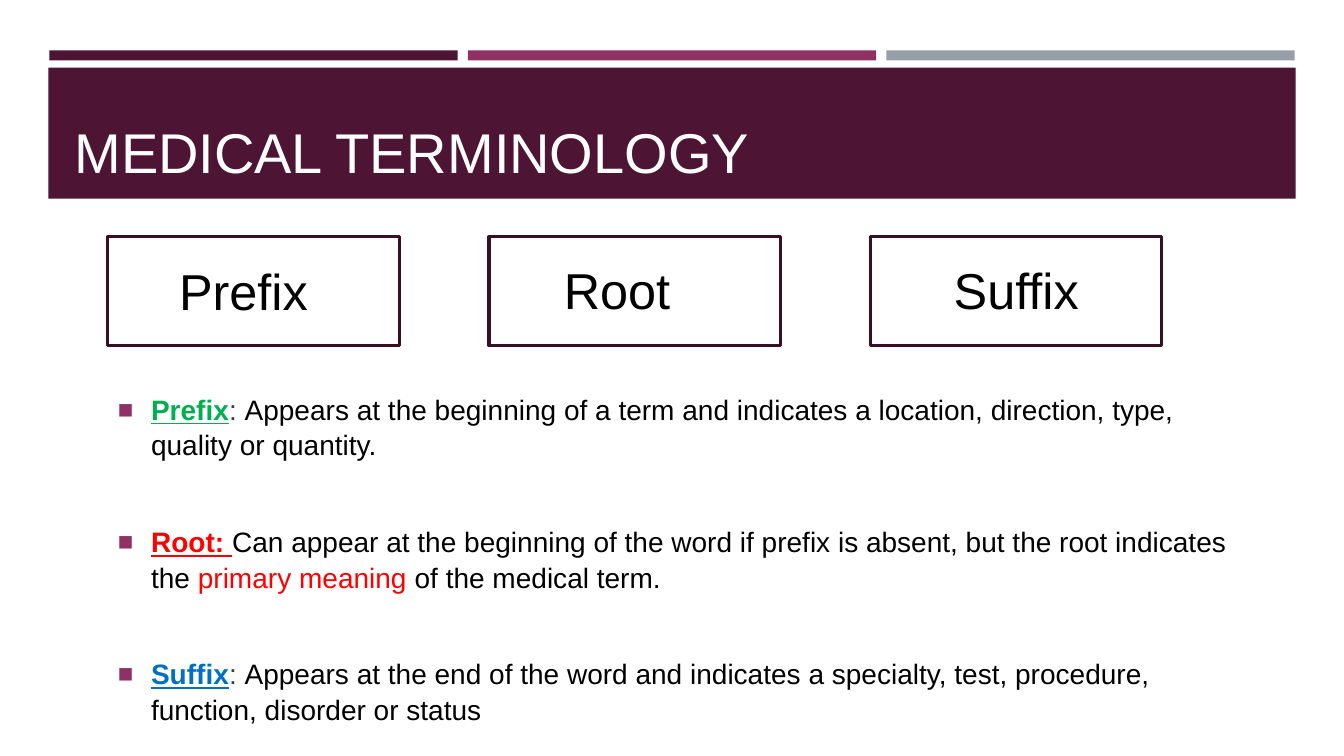
"""Build a slide on the parts of a medical term."""
from dataclasses import dataclass

import lxml.etree
import pptx
import pptx.dml.color
import pptx.enum.shapes
import pptx.enum.text
import pptx.oxml.ns
import pptx.presentation
import pptx.slide
import pptx.util

RGBColor = pptx.dml.color.RGBColor
Inches = pptx.util.Inches
Pt = pptx.util.Pt
Anchor = pptx.enum.text.MSO_ANCHOR
Align = pptx.enum.text.PP_ALIGN
qn = pptx.oxml.ns.qn

PLUM = RGBColor(0x4D, 0x14, 0x34)
MAUVE = RGBColor(0x90, 0x31, 0x63)
STEEL = RGBColor(0x96, 0x9F, 0xA7)
EDGE = RGBColor(0x39, 0x0F, 0x26)
WHITE = RGBColor(0xFF, 0xFF, 0xFF)
BLACK = RGBColor(0, 0, 0)
GREY = RGBColor(0x3D, 0x3D, 0x3D)
GREEN = RGBColor(0x00, 0xB0, 0x50)
RED = RGBColor(0xFF, 0, 0)
BLUE = RGBColor(0x00, 0x70, 0xC0)


@dataclass(frozen=True)
class Box:
    left: float
    top: float
    width: float
    height: float

    def frame(self) -> list[int]:
        return [Inches(v) for v in (self.left, self.top, self.width, self.height)]


@dataclass(frozen=True)
class Span:
    text: str
    color: RGBColor = BLACK
    term: bool = False


@dataclass(frozen=True)
class Label:
    text: str
    box: Box


BARS = [PLUM, MAUVE, STEEL]
LABELS = [
    Label("Prefix", Box(1.55, 2.53, 1.73, 0.71)),
    Label("Root", Box(4.92, 2.52, 2.4, 0.71)),
    Label("Suffix", Box(9.21, 2.52, 1.74, 0.71)),
]
POINTS = [
    [
        Span("Prefix", GREEN, True),
        Span(": ", GREY),
        Span("Appears at the beginning of a term and indicates a location, "
             "direction, type, quality or quantity."),
    ],
    [
        Span("Root: ", RED, True),
        Span("Can appear at the beginning of the word if prefix is absent, "
             "but the root indicates the "),
        Span("primary meaning ", RED),
        Span("of the medical term."),
    ],
    [
        Span("Suffix", BLUE, True),
        Span(": ", GREY),
        Span("Appears at the end of the word and indicates a specialty, test, "
             "procedure, function, disorder or status"),
    ],
]


def add_rect(slide: pptx.slide.Slide, box: Box, fill: RGBColor | None = None,
             line: RGBColor | None = None) -> None:
    """Draw a filled or outlined rectangle."""
    rect = slide.shapes.add_shape(
        pptx.enum.shapes.MSO_SHAPE.RECTANGLE, *box.frame())
    rect.shadow.inherit = False
    if fill is None:
        rect.fill.background()
    else:
        rect.fill.solid()
        rect.fill.fore_color.rgb = fill
    if line is None:
        rect.line.fill.background()
    else:
        rect.line.color.rgb = line
        rect.line.width = Pt(2.25)


def add_mark(para) -> None:
    """Give a paragraph a square bullet with a hanging indent."""
    props = para._p.get_or_add_pPr()
    props.set("marL", str(Inches(0.33)))
    props.set("indent", str(-Inches(0.33)))
    color = lxml.etree.SubElement(props, qn("a:buClr"))
    lxml.etree.SubElement(color, qn("a:srgbClr"), val=str(MAUVE))
    lxml.etree.SubElement(props, qn("a:buSzPct"), val="92000")
    lxml.etree.SubElement(props, qn("a:buFont"), typeface="Arial")
    lxml.etree.SubElement(props, qn("a:buChar"), char="■")


def add_text(slide: pptx.slide.Slide, box: Box, lines: list[list[Span]], *,
             size: float, anchor: Anchor = Anchor.TOP,
             align: Align = Align.LEFT, marked: bool = False,
             pitch: float = 1.0, gap: float = 0) -> None:
    """Place paragraphs of styled spans in a text box."""
    frame = slide.shapes.add_textbox(*box.frame()).text_frame
    frame.word_wrap = True
    frame.vertical_anchor = anchor
    for index, spans in enumerate(lines):
        para = frame.add_paragraph() if index else frame.paragraphs[0]
        if marked:
            add_mark(para)
        para.alignment = align
        para.line_spacing = pitch
        if index:
            para.space_before = Pt(gap)
        for span in spans:
            run = para.add_run()
            run.text = span.text
            run.font.name = "Arial"
            run.font.size = Pt(size)
            run.font.color.rgb = span.color
            run.font.bold = span.term
            run.font.underline = span.term


def main() -> None:
    """Draw the slide and save it."""
    deck = pptx.Presentation()
    deck.slide_width, deck.slide_height = Inches(13.33), Inches(7.5)
    slide = deck.slides.add_slide(deck.slide_layouts[6])

    for index, color in enumerate(BARS):
        add_rect(slide, Box(0.49 + 4.15 * index, 0.5, 4.05, 0.1), fill=color)
    add_rect(slide, Box(0.48, 0.67, 12.37, 1.3), fill=PLUM)
    add_text(slide, Box(0.64, 0.77, 12.06, 1.11),
             [[Span("MEDICAL TERMINOLOGY", WHITE)]],
             size=40, anchor=Anchor.BOTTOM)
    add_text(slide, Box(1.07, 3.76, 11.5, 3.56), POINTS, size=20,
             anchor=Anchor.MIDDLE, marked=True, pitch=1.05, gap=44)
    for index, label in enumerate(LABELS):
        add_rect(slide, Box(1.07 + 3.78 * index, 2.35, 2.89, 1.08), line=EDGE)
        add_text(slide, label.box, [[Span(label.text)]], size=36,
                 align=Align.CENTER)

    deck.save("out.pptx")


if __name__ == "__main__":
    main()
